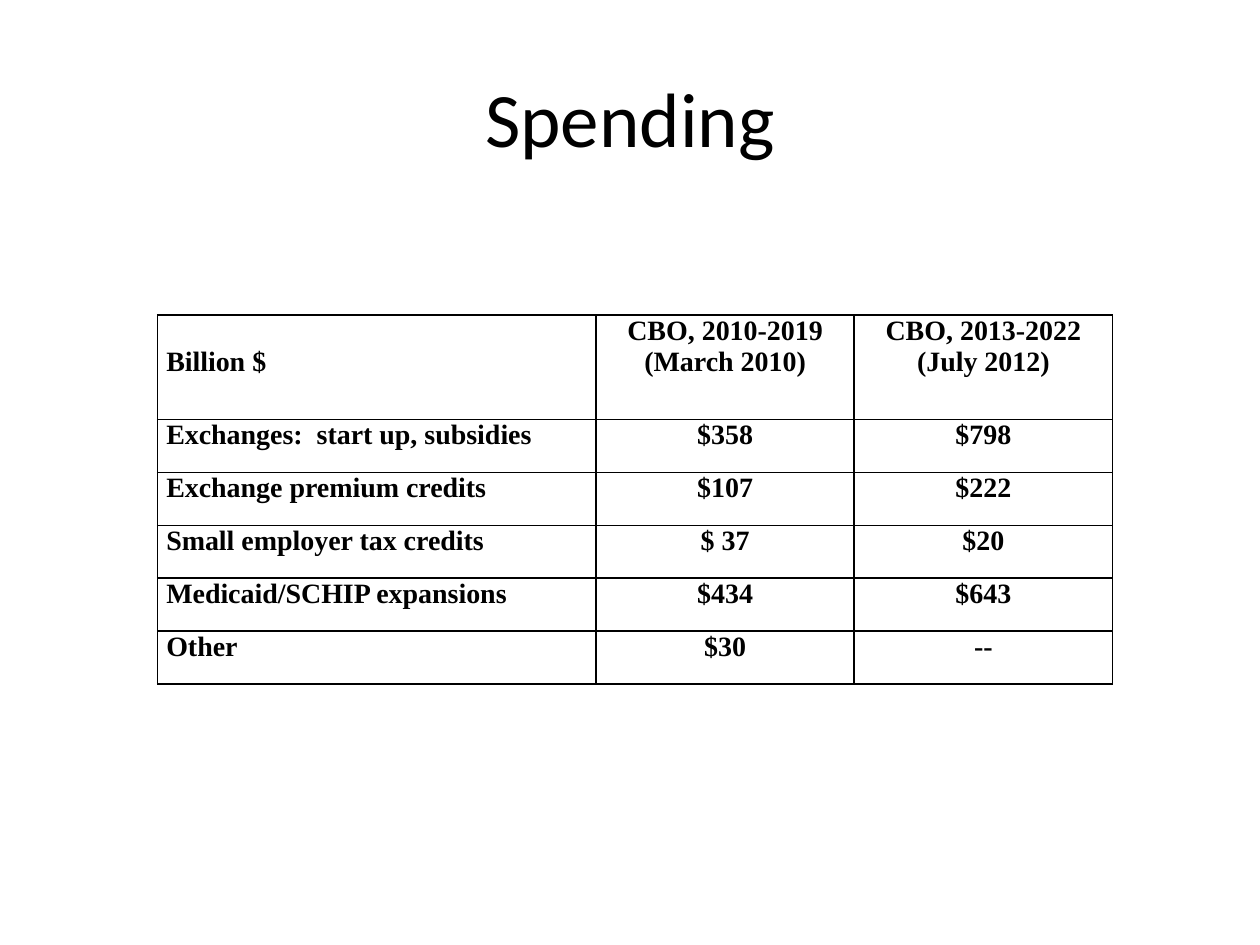
"""Build a slide with a table of spending estimates."""
import pptx
import pptx.dml.color
import pptx.enum.text
import pptx.oxml
import pptx.oxml.ns
import pptx.util
from pptx.util import Inches


def color(value):
    return pptx.dml.color.RGBColor.from_string(value)


def write_text(text_frame, text, size, font, bold=False, align="CENTER"):
    text_frame.text = text
    for paragraph in text_frame.paragraphs:
        paragraph.alignment = getattr(pptx.enum.text.PP_ALIGN, align)
        for run in paragraph.runs:
            run.font.size = pptx.util.Pt(size)
            run.font.name = font
            run.font.bold = bold
            run.font.color.rgb = color("000000")


presentation = pptx.Presentation()
presentation.slide_width = Inches(10)
presentation.slide_height = Inches(7.5)
slide = presentation.slides.add_slide(presentation.slide_layouts[5])
slide.background.fill.solid()
slide.background.fill.fore_color.rgb = color("FFFFFF")

title = slide.shapes.title
title.left, title.top = Inches(0.5), Inches(0.3)
title.width, title.height = Inches(9), Inches(1.25)
title.text_frame.vertical_anchor = pptx.enum.text.MSO_ANCHOR.MIDDLE
write_text(title.text_frame, "Spending", size=44, font="Calibri")

rows = [
    ("Billion $", "CBO, 2010-2019\n(March 2010)", "CBO, 2013-2022\n(July 2012)"),
    ("Exchanges:  start up, subsidies", "$358", "$798"),
    ("Exchange premium credits", "$107", "$222"),
    ("Small employer tax credits", "$ 37", "$20"),
    ("Medicaid/SCHIP expansions", "$434", "$643"),
    ("Other", "$30", "--"),
]
column_widths = [3.48, 2.05, 2.05]
row_heights = [0.83] + [0.42] * (len(rows) - 1)

table = slide.shapes.add_table(
    len(rows), len(column_widths), Inches(1.25), Inches(2.5),
    Inches(sum(column_widths)), Inches(sum(row_heights)),
).table
table.first_row = False
table.horz_banding = False
for column, width in zip(table.columns, column_widths):
    column.width = Inches(width)
for row, height in zip(table.rows, row_heights):
    row.height = Inches(height)

for row_index, row_texts in enumerate(rows):
    for column_index, text in enumerate(row_texts):
        cell = table.cell(row_index, column_index)
        cell.margin_left = cell.margin_right = Inches(0.07)
        cell.margin_top = cell.margin_bottom = Inches(0)
        cell.vertical_anchor = pptx.enum.text.MSO_ANCHOR.TOP
        align = "CENTER" if column_index else "LEFT"
        write_text(cell.text_frame, text, size=16, font="Times New Roman", bold=True, align=align)
        properties = cell._tc.get_or_add_tcPr()
        for side in ("lnL", "lnR", "lnT", "lnB"):
            properties.append(pptx.oxml.parse_xml(
                f'<a:{side} {pptx.oxml.ns.nsdecls("a")} w="{pptx.util.Pt(1)}"><a:solidFill>'
                f'<a:srgbClr val="000000"/></a:solidFill></a:{side}>'
            ))
        cell.fill.solid()
        cell.fill.fore_color.rgb = color("FFFFFF")
table.cell(0, 0).margin_top = Inches(0.25)

presentation.save("out.pptx")
